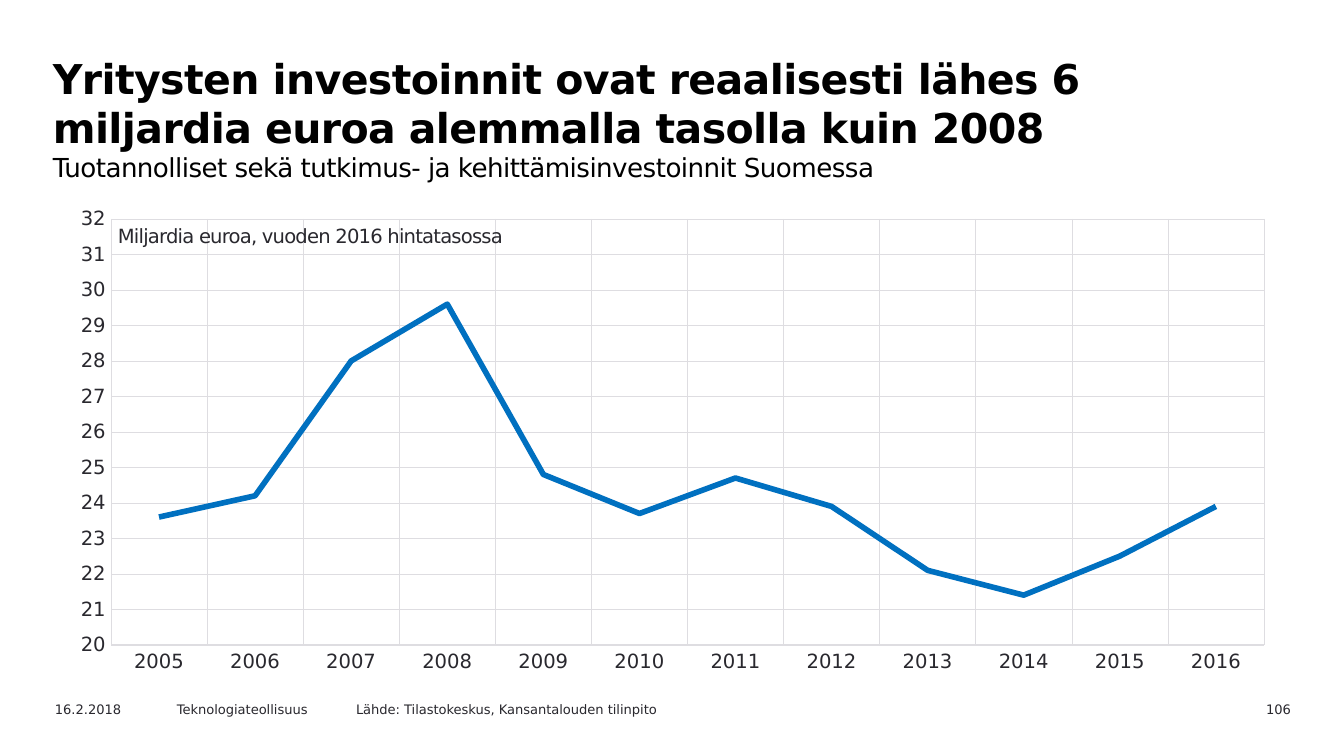
from pptx import Presentation
from pptx.chart.data import CategoryChartData
from pptx.dml.color import RGBColor
from pptx.enum.chart import XL_CHART_TYPE as ChartType, XL_TICK_MARK as TickMark
from pptx.enum.text import PP_ALIGN as Align
from pptx.oxml import parse_xml
from pptx.oxml.ns import nsdecls, qn
from pptx.util import Pt

WIDTH, HEIGHT = 1344, 756
EMU_PER_PX = 9144000 / WIDTH
FONT = "DejaVu Sans"
BLACK, INK, GRID, BLUE = "000000", "29282E", "DEDDE1", "0070C0"

INVESTMENTS = {
    "2005": 23.6, "2006": 24.2, "2007": 28, "2008": 29.6,
    "2009": 24.8, "2010": 23.7, "2011": 24.7, "2012": 23.9,
    "2013": 22.1, "2014": 21.4, "2015": 22.5, "2016": 23.9,
}


def px(length):
    return round(length * EMU_PER_PX)


def color(hex_string):
    return RGBColor.from_string(hex_string)


def style_font(font, size, hex_string, bold=False):
    font.name, font.size, font.bold = FONT, Pt(size), bold
    font.color.rgb = color(hex_string)


def add_run(paragraph, text, size, hex_string=INK, bold=False, spacing=0):
    """Spacing between letters is in hundredths of a point."""
    run = paragraph.add_run()
    run.text = text
    style_font(run.font, size, hex_string, bold)
    if spacing:
        run.font._element.set("spc", str(spacing))


def add_text(slide, box, *runs, align=Align.LEFT, inset=(13, 7)):
    """Each run is a dict of add_run arguments; runs stand on separate lines."""
    frame = slide.shapes.add_textbox(*map(px, box)).text_frame
    frame.word_wrap = True
    frame.margin_left = frame.margin_right = px(inset[0])
    frame.margin_top = frame.margin_bottom = px(inset[1])
    paragraph = frame.paragraphs[0]
    paragraph.alignment = align
    for index, run in enumerate(runs):
        if index:
            paragraph.add_line_break()
        add_run(paragraph, **run)


def add_heading(slide, box):
    add_text(
        slide, box,
        dict(text="Yritysten investoinnit ovat reaalisesti lähes 6 miljardia "
                  "euroa alemmalla tasolla kuin 2008",
             size=22, hex_string=BLACK, bold=True, spacing=-30),
        dict(text="Tuotannolliset sekä tutkimus- ja kehittämisinvestoinnit Suomessa",
             size=14, hex_string=BLACK, spacing=-30),
        inset=(15, 11))


def style_axis(axis):
    axis.major_tick_mark = axis.minor_tick_mark = TickMark.NONE
    style_font(axis.tick_labels.font, 10.5, INK)
    axis.has_major_gridlines = True
    line = axis.major_gridlines.format.line
    line.color.rgb, line.width = color(GRID), Pt(0.25)


def set_plot_area(chart, box, plot):
    """Fix the inner plot area, given in px from the chart's corner."""
    shares = zip("xywh", plot, (box[2], box[3]) * 2)
    sizes = "".join(f'<c:{key} val="{part / whole:.4f}"/>' for key, part, whole in shares)
    layout = parse_xml(
        f'<c:layout {nsdecls("c")}><c:manualLayout><c:layoutTarget val="inner"/>'
        f'<c:xMode val="edge"/><c:yMode val="edge"/>{sizes}</c:manualLayout></c:layout>')
    plot_area = chart._chartSpace.chart.plotArea
    for old in plot_area.findall(qn("c:layout")):
        plot_area.remove(old)
    plot_area.insert(0, layout)


def add_investment_chart(slide, box):
    data = CategoryChartData()
    data.categories = list(INVESTMENTS)
    data.add_series("Investoinnit", list(INVESTMENTS.values()))
    chart = slide.shapes.add_chart(ChartType.LINE, *map(px, box), data).chart
    chart.has_legend = chart.has_title = False
    style_font(chart.font, 10.5, INK)
    set_plot_area(chart, box, (55, 21, 1153, 426))

    # Axes
    years, values = chart.category_axis, chart.value_axis
    style_axis(years)
    style_axis(values)
    years.format.line.color.rgb = color(GRID)
    years.format.line.width = Pt(0.75)
    values.format.line.fill.background()
    values.minimum_scale, values.maximum_scale, values.major_unit = 20, 32, 1
    values.tick_labels.number_format = "#,##0"
    values.tick_labels.number_format_is_linked = False
    if values._element.find(qn("c:crossBetween")) is None:
        values._element.find(qn("c:crosses")).addnext(
            parse_xml(f'<c:crossBetween {nsdecls("c")} val="between"/>'))

    # Line
    chart.plots[0].vary_by_categories = False
    series = chart.plots[0].series[0]
    series.smooth = False
    series.format.line.color.rgb = color(BLUE)
    series.format.line.width = Pt(3)

    # Unit label
    left, top = box[:2]
    add_text(slide, (left + 57, top + 21, 530, 35),
             dict(text="Miljardia euroa, vuoden 2016 hintatasossa", size=10.5, spacing=-40),
             inset=(5, 5))


def add_footer(slide, box):
    left, top, width, height = box
    parts = [
        (0, 134, "16.2.2018", Align.LEFT),
        (122, 191, "Teknologiateollisuus", Align.LEFT),
        (301, 437, "Lähde: Tilastokeskus, Kansantalouden tilinpito", Align.LEFT),
        (width - 126, 126, "106", Align.RIGHT),
    ]
    for offset, part_width, text, align in parts:
        add_text(slide, (left + offset, top, part_width, height),
                 dict(text=text, size=7), align=align)


def main():
    presentation = Presentation()
    presentation.slide_width, presentation.slide_height = px(WIDTH), px(HEIGHT)
    slide = presentation.slides.add_slide(presentation.slide_layouts[6])
    add_heading(slide, (38, 42, 1175, 95))
    add_investment_chart(slide, (56, 198, 1234, 485))
    add_footer(slide, (42, 695, 1262, 24))
    presentation.save("out.pptx")


if __name__ == "__main__":
    main()
